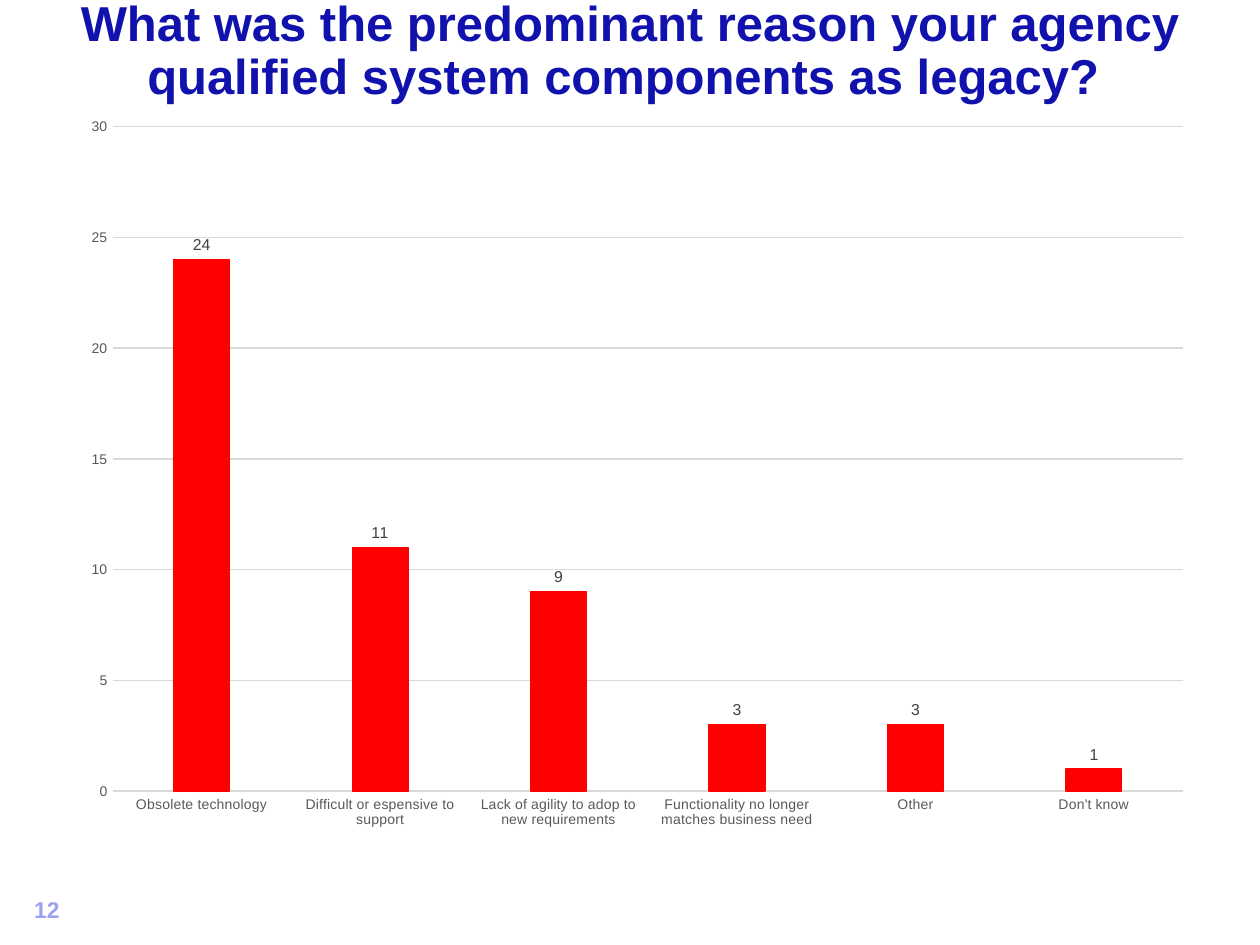
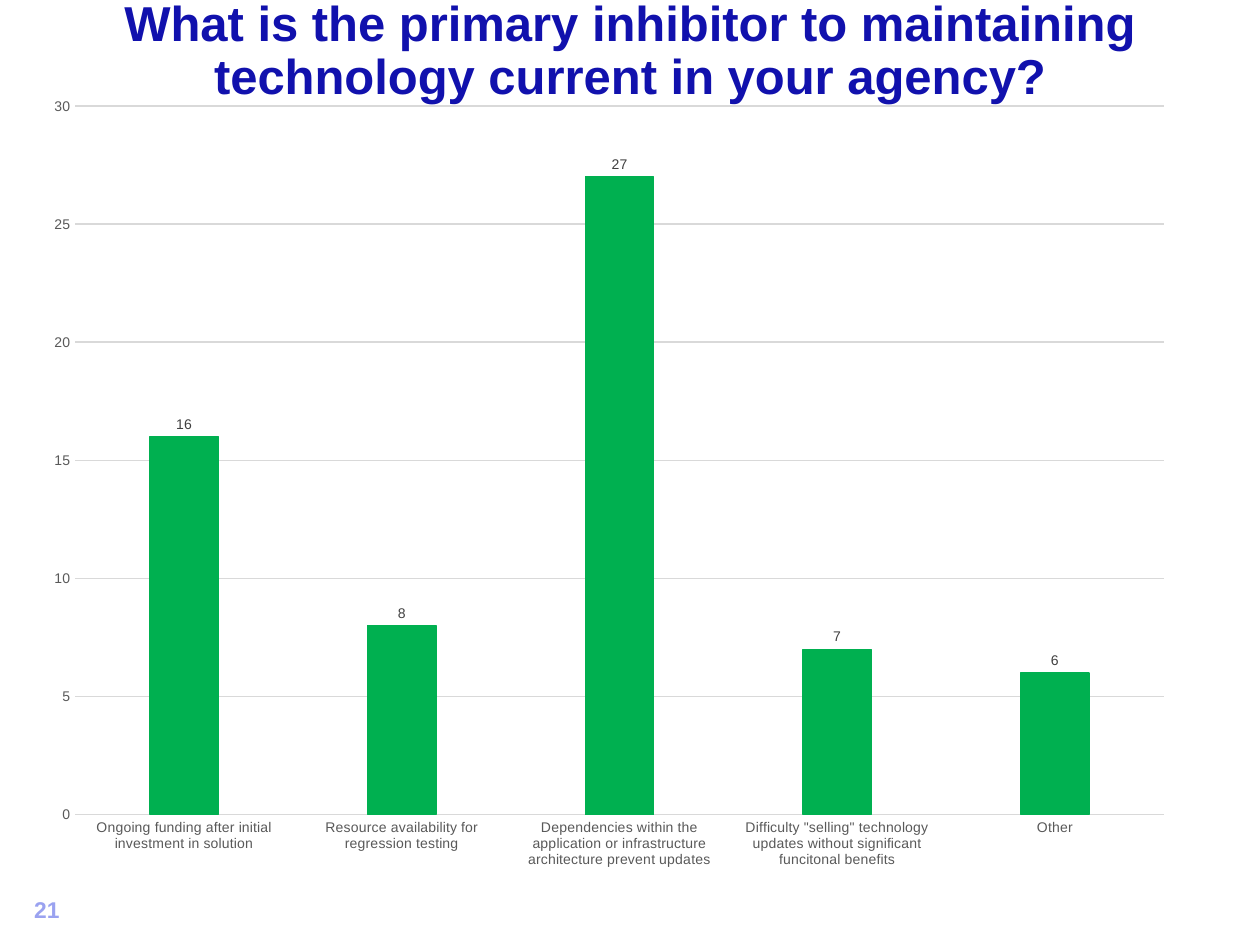
"""Build two survey result slides, each with a title, a column chart and a page number."""
import pptx
import pptx.chart.data
import pptx.dml.color
import pptx.enum.chart
import pptx.enum.text
import pptx.oxml
import pptx.oxml.ns
import pptx.util
from pptx.util import Inches

FONT = "Arial"
WHITE, NAVY, LILAC = "FFFFFF", "1111AD", "9AA2F0"
GRID, AXIS_TEXT, LABEL_TEXT = "D9D9D9", "595959", "404040"
TITLE = {"size": 28, "bold": True, "color": NAVY}
PAGE_NUMBER = {"size": 13, "bold": True, "color": LILAC}
AXIS = {"size": 8, "bold": False, "color": AXIS_TEXT}

SURVEYS = [
    {
        "title": "What was the predominant reason your agency "
                 "qualified system components as legacy? ",
        "number": "12",
        "box": (0.55, 0.83, 9.03, 5.86),
        "plot": {"x": 0.038, "y": 0.03, "w": 0.941, "h": 0.9},
        "color": "FF0000",
        "label_size": 9,
        "answers": {
            "Obsolete technology": 24,
            "Difficult or espensive to support": 11,
            "Lack of agility to adop to new requirements": 9,
            "Functionality no longer matches business need": 3,
            "Other": 3,
            "Don't know": 1,
        },
    },
    {
        "title": "What is the primary inhibitor to maintaining "
                 "technology current in your agency?",
        "number": "21",
        "box": (0.25, 0.65, 9.17, 6.35),
        "plot": {"x": 0.038, "y": 0.03, "w": 0.942, "h": 0.886},
        "color": "00B050",
        "label_size": 8,
        "answers": {
            "Ongoing funding after initial investment in solution": 16,
            "Resource availability for regression testing": 8,
            "Dependencies within the application or infrastructure "
            "architecture prevent updates": 27,
            'Difficulty "selling" technology updates without significant '
            "funcitonal benefits": 7,
            "Other": 6,
        },
    },
]


def rgb(value):
    return pptx.dml.color.RGBColor.from_string(value)


def set_attributes(target, values):
    for name, value in values.items():
        setattr(target, name, value)


def set_font(font, style):
    set_attributes(font, {"name": FONT, "size": pptx.util.Pt(style["size"]),
                          "bold": style["bold"]})
    font.color.rgb = rgb(style["color"])


def set_line(line, color):
    line.color.rgb = rgb(color)
    line.width = pptx.util.Pt(0.75)


def add_text(slide, box, text, style, frame, paragraph):
    tf = slide.shapes.add_textbox(*map(Inches, box)).text_frame
    set_attributes(tf, {"word_wrap": True, **frame})
    p = tf.paragraphs[0]
    set_attributes(p, paragraph)
    r = p.add_run()
    r.text = text
    set_font(r.font, style)


def add_title(slide, text):
    add_text(slide, (0.25, 0, 9.5, 0.83), text, TITLE,
             {"vertical_anchor": pptx.enum.text.MSO_ANCHOR.MIDDLE},
             {"alignment": pptx.enum.text.PP_ALIGN.CENTER, "line_spacing": 0.9})


def add_page_number(slide, number):
    add_text(slide, (0, 7.08, 0.57, 0.38), number, PAGE_NUMBER,
             {"margin_top": Inches(0.03)},
             {"alignment": pptx.enum.text.PP_ALIGN.RIGHT})


def place_plot(chart, plot):
    """Fix the inner plot area as fractions of the chart."""
    qn = pptx.oxml.ns.qn
    area = chart.element.find(".//" + qn("c:plotArea"))
    old = area.find(qn("c:layout"))
    if old is not None:
        area.remove(old)
    sizes = "".join(f'<c:{k} val="{v}"/>' for k, v in plot.items())
    area.insert(0, pptx.oxml.parse_xml(
        f'<c:layout {pptx.oxml.ns.nsdecls("c")}><c:manualLayout>'
        '<c:layoutTarget val="inner"/><c:xMode val="edge"/><c:yMode val="edge"/>'
        f'{sizes}</c:manualLayout></c:layout>'))


def format_axes(chart):
    none = pptx.enum.chart.XL_TICK_MARK.NONE
    for axis in (chart.category_axis, chart.value_axis):
        set_attributes(axis, {"major_tick_mark": none, "minor_tick_mark": none})
        set_font(axis.tick_labels.font, AXIS)
    set_line(chart.category_axis.format.line, GRID)
    values = chart.value_axis
    set_attributes(values, {"minimum_scale": 0, "maximum_scale": 30, "major_unit": 5,
                            "has_major_gridlines": True})
    values.format.line.fill.background()
    set_line(values.major_gridlines.format.line, GRID)


def add_column_chart(slide, survey):
    data = pptx.chart.data.CategoryChartData()
    data.categories = list(survey["answers"])
    data.add_series("Series 1", list(survey["answers"].values()))
    chart = slide.shapes.add_chart(
        pptx.enum.chart.XL_CHART_TYPE.COLUMN_CLUSTERED,
        *map(Inches, survey["box"]), data).chart
    set_attributes(chart, {"has_title": False, "has_legend": False})
    set_font(chart.font, AXIS)
    format_axes(chart)
    plot = chart.plots[0]
    set_attributes(plot, {"gap_width": 219, "overlap": -27, "vary_by_categories": False})
    series = plot.series[0]
    series.format.fill.solid()
    series.format.fill.fore_color.rgb = rgb(survey["color"])
    set_line(series.format.line, survey["color"])
    labels = series.data_labels
    set_attributes(labels, {"show_value": True,
                            "position": pptx.enum.chart.XL_LABEL_POSITION.OUTSIDE_END})
    set_font(labels.font, {"size": survey["label_size"], "bold": False,
                           "color": LABEL_TEXT})
    place_plot(chart, survey["plot"])


def add_survey_slide(prs, survey):
    slide = prs.slides.add_slide(prs.slide_layouts[6])
    slide.background.fill.solid()
    slide.background.fill.fore_color.rgb = rgb(WHITE)
    add_title(slide, survey["title"])
    add_page_number(slide, survey["number"])
    add_column_chart(slide, survey)


def main():
    prs = pptx.Presentation()
    set_attributes(prs, {"slide_width": Inches(10), "slide_height": Inches(7.5)})
    for survey in SURVEYS:
        add_survey_slide(prs, survey)
    prs.save("out.pptx")


if __name__ == "__main__":
    main()
